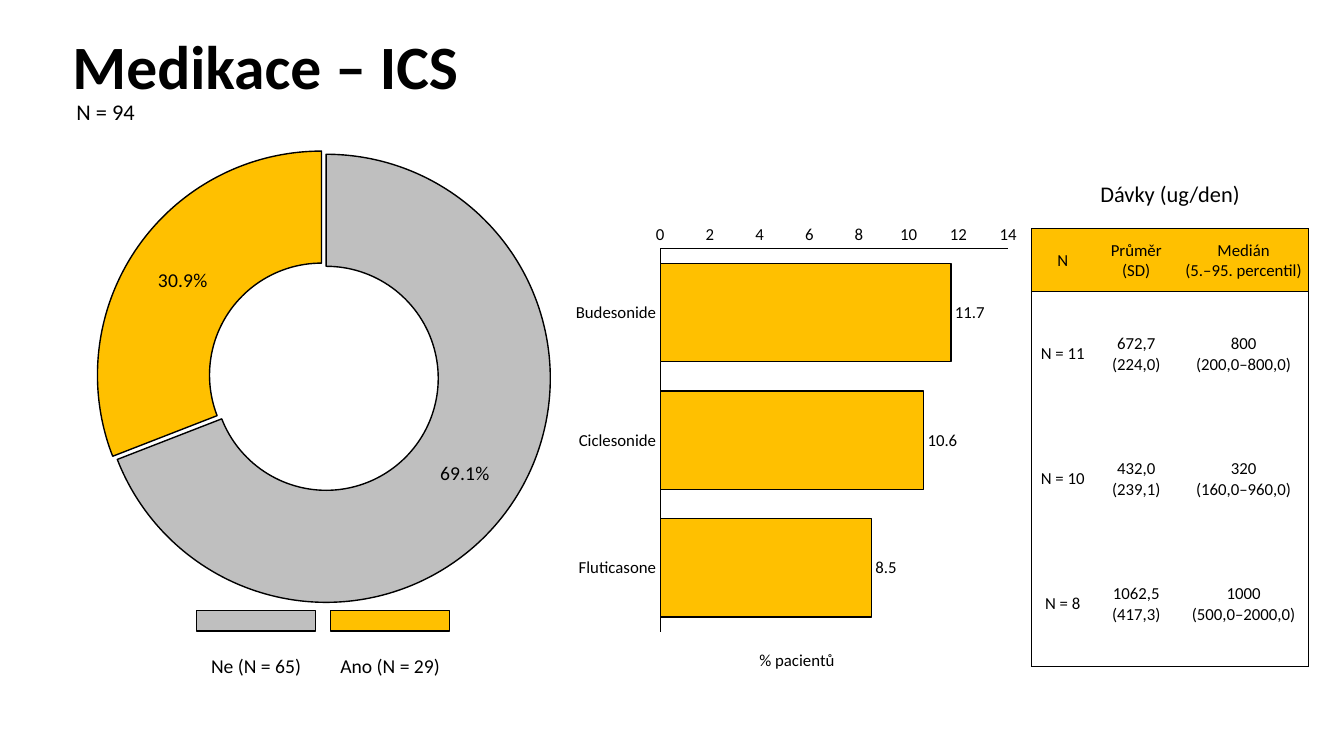
"""Build the slide on ICS medication: a ring, a bar chart and a dose table."""
from lxml import etree
from pptx import Presentation
from pptx.chart.data import CategoryChartData
from pptx.dml.color import RGBColor
from pptx.enum.chart import XL_CHART_TYPE, XL_LABEL_POSITION, XL_TICK_MARK
from pptx.enum.shapes import MSO_SHAPE
from pptx.enum.text import MSO_ANCHOR, PP_ALIGN
from pptx.oxml.ns import qn
from pptx.util import Pt

PX = 9144
FONT, BLACK, WHITE, GREY, GOLD = "Calibri", "000000", "FFFFFF", "BFBFBF", "FFC000"
RING, BAR = XL_CHART_TYPE.DOUGHNUT, XL_CHART_TYPE.BAR_CLUSTERED
OUTER, NO_TICK = XL_LABEL_POSITION.OUTSIDE_END, XL_TICK_MARK.NONE
RECT, MIDDLE = MSO_SHAPE.RECTANGLE, MSO_ANCHOR.MIDDLE
LEFT, CENTER = PP_ALIGN.LEFT, PP_ALIGN.CENTER

DOSES = [
    ["N", "Průměr\n(SD)", "Medián\v(5.–95. percentil)"],
    ["N = 11", "672,7 (224,0)", "800\v(200,0–800,0)"],
    ["N = 10", "432,0 (239,1)", "320\v(160,0–960,0)"],
    ["N = 8", "1062,5 (417,3)", "1000\v(500,0–2000,0)"],
]


def color(code):
    """Turn a hex string into a colour."""
    return RGBColor.from_string(code)


def scale(box):
    """Turn px lengths into EMU."""
    return [n * PX for n in box]


def assign(item, **values):
    """Set attributes from a dict of format values."""
    for name, value in values.items():
        setattr(item, name, value)


def style(font, size, bold=False):
    """Format a font in black."""
    assign(font, name=FONT, size=Pt(size), bold=bold)
    font.color.rgb = color(BLACK)


def stroke(line):
    """Draw a thin black line."""
    line.color.rgb = color(BLACK)
    line.width = Pt(1)


def paint(item, fill):
    """Fill a shape or chart part and outline it in black."""
    item.fill.solid()
    item.fill.fore_color.rgb = color(fill)
    stroke(item.line)


def add_text(slide, box, text, size, align=LEFT, bold=False, space=1.0):
    """Add one line of text, centred on its height."""
    frame = slide.shapes.add_textbox(*scale(box)).text_frame
    assign(frame, word_wrap=True, vertical_anchor=MIDDLE, text=text)
    para = frame.paragraphs[0]
    assign(para, alignment=align, line_spacing=space)
    style(para.font, size, bold)


def add_key(slide, left, fill, text):
    """Add a legend swatch with its label below."""
    swatch = slide.shapes.add_shape(RECT, *scale((left, 606, 118, 20)))
    swatch.shadow.inherit = False
    paint(swatch, fill)
    add_text(slide, (left - 8, 640, 134, 41), text, 14, CENTER)


def set_layout(parent, index, **values):
    """Give a chart part a manual layout in fractions of the chart."""
    for old in parent.findall(qn("c:layout")):
        parent.remove(old)
    layout = etree.Element(qn("c:layout"))
    manual = etree.SubElement(layout, qn("c:manualLayout"))
    for name, value in values.items():
        etree.SubElement(manual, qn("c:" + name)).set("val", str(value))
    parent.insert(index, layout)


def add_chart(slide, kind, box, cats, vals, plot_box):
    """Add a chart with one series and a fixed plot area."""
    data = CategoryChartData()
    data.categories = cats
    data.add_series("Series 1", vals)
    chart = slide.shapes.add_chart(kind, *scale(box), data).chart
    assign(chart, has_title=False, has_legend=False)
    style(chart.font, 12)
    x, y, w, h = plot_box
    set_layout(chart._chartSpace.chart.plotArea, 0, layoutTarget="inner",
               xMode="edge", yMode="edge", x=x, y=y, w=w, h=h)
    return chart


def add_labels(plot, size, **values):
    """Show data labels on a plot."""
    plot.has_data_labels = True
    labels = plot.data_labels
    style(labels.font, size)
    assign(labels, number_format_is_linked=False, **values)


def add_ring(slide):
    """Add the ring of patients without and with ICS."""
    chart = add_chart(slide, RING, (65, 139, 507, 468), ["1", "2"],
                      [69.1, 30.9], (0.07, 0.03, 0.88, 0.95))
    plot = chart.plots[0]
    series = plot.series[0]
    for n, fill in enumerate((GREY, GOLD)):
        paint(series.points[n].format, fill)
    slice_ = series._element.findall(qn("c:dPt"))[1]
    burst = etree.Element(qn("c:explosion"), val="5")
    slice_.find(qn("c:spPr")).addprevious(burst)
    plot._element.find(qn("c:holeSize")).set("val", "49")
    add_labels(plot, 14, number_format="0.0%", show_percentage=True,
               show_value=False)


def add_bars(slide):
    """Add the bars of patients by drug."""
    chart = add_chart(slide, BAR, (564, 214, 454, 469),
                      ["Budesonide", "Ciclesonide", "Fluticasone"],
                      [11.7, 10.6, 8.5], (0.2, 0.07, 0.76, 0.81))
    plot = chart.plots[0]
    assign(plot, gap_width=30, vary_by_categories=False)
    paint(plot.series[0].format, GOLD)
    add_labels(plot, 12, number_format="#,##0.0", show_value=True,
               position=OUTER)
    cat, val = chart.category_axis, chart.value_axis
    for axis in (cat, val):
        assign(axis, major_tick_mark=NO_TICK, minor_tick_mark=NO_TICK,
               has_major_gridlines=False)
        style(axis.tick_labels.font, 12)
        stroke(axis.format.line)
    cat.reverse_order = True
    assign(val, minimum_scale=0, maximum_scale=14, major_unit=2)
    assign(val.tick_labels, number_format="#,##0",
           number_format_is_linked=False)
    title = val.axis_title
    title.text_frame.text = "% pacientů"
    style(title.text_frame.paragraphs[0].runs[0].font, 12)
    set_layout(title._element, 1, xMode="edge", yMode="edge", x=0.41, y=0.91)


def add_edges(cell, sides):
    """Draw the named sides of a cell and clear the others."""
    props = cell._tc.get_or_add_tcPr()
    for n, side in enumerate("LRTB"):
        line = etree.Element(qn("a:ln" + side), w=str(Pt(1)))
        if side in sides:
            fill = etree.SubElement(line, qn("a:solidFill"))
            etree.SubElement(fill, qn("a:srgbClr"), val=BLACK)
        else:
            etree.SubElement(line, qn("a:noFill"))
        props.insert(n, line)


def add_doses(slide):
    """Add the table of doses, framed and with a gold head."""
    table = slide.shapes.add_table(4, 3, *scale((1023, 227, 275, 434))).table
    assign(table, first_row=False, horz_banding=False)
    for col, width in zip(table.columns, (62, 84, 129)):
        col.width = width * PX
    for r, texts in enumerate(DOSES):
        table.rows[r].height = (124 if r else 62) * PX
        for c, text in enumerate(texts):
            cell = table.cell(r, c)
            assign(cell, text=text, vertical_anchor=MIDDLE, margin_left=PX,
                   margin_right=PX, margin_top=PX, margin_bottom=0)
            cell.fill.solid()
            cell.fill.fore_color.rgb = color(WHITE if r else GOLD)
            for para in cell.text_frame.paragraphs:
                para.alignment = CENTER
                style(para.font, 12)
            rules = {"L": c == 0, "R": c == 2, "T": r < 2, "B": r in (0, 3)}
            add_edges(cell, [side for side, on in rules.items() if on])


def main():
    """Build the slide and save it."""
    deck = Presentation()
    assign(deck, slide_width=1333 * PX, slide_height=750 * PX)
    slide = deck.slides.add_slide(deck.slide_layouts[6])
    add_text(slide, (62, 20, 1209, 98), "Medikace – ICS", 44, bold=True,
             space=0.9)
    add_ring(slide)
    add_key(slide, 195, GREY, "Ne (N = 65)")
    add_key(slide, 328, GOLD, "Ano (N = 29)")
    add_bars(slide)
    add_doses(slide)
    add_text(slide, (66, 90, 100, 42), "N = 94", 16)
    add_text(slide, (1023, 171, 275, 42), "Dávky (ug/den)", 16, CENTER)
    deck.save("out.pptx")


if __name__ == "__main__":
    main()
